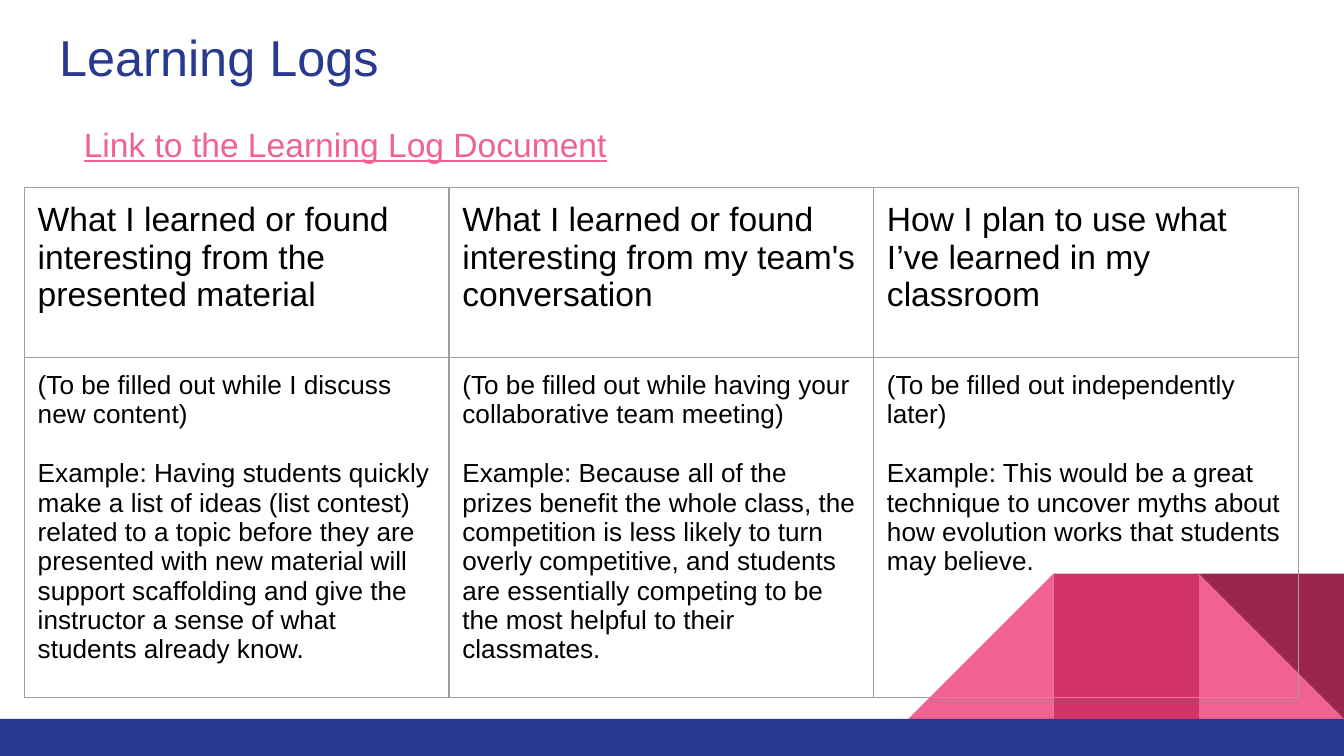
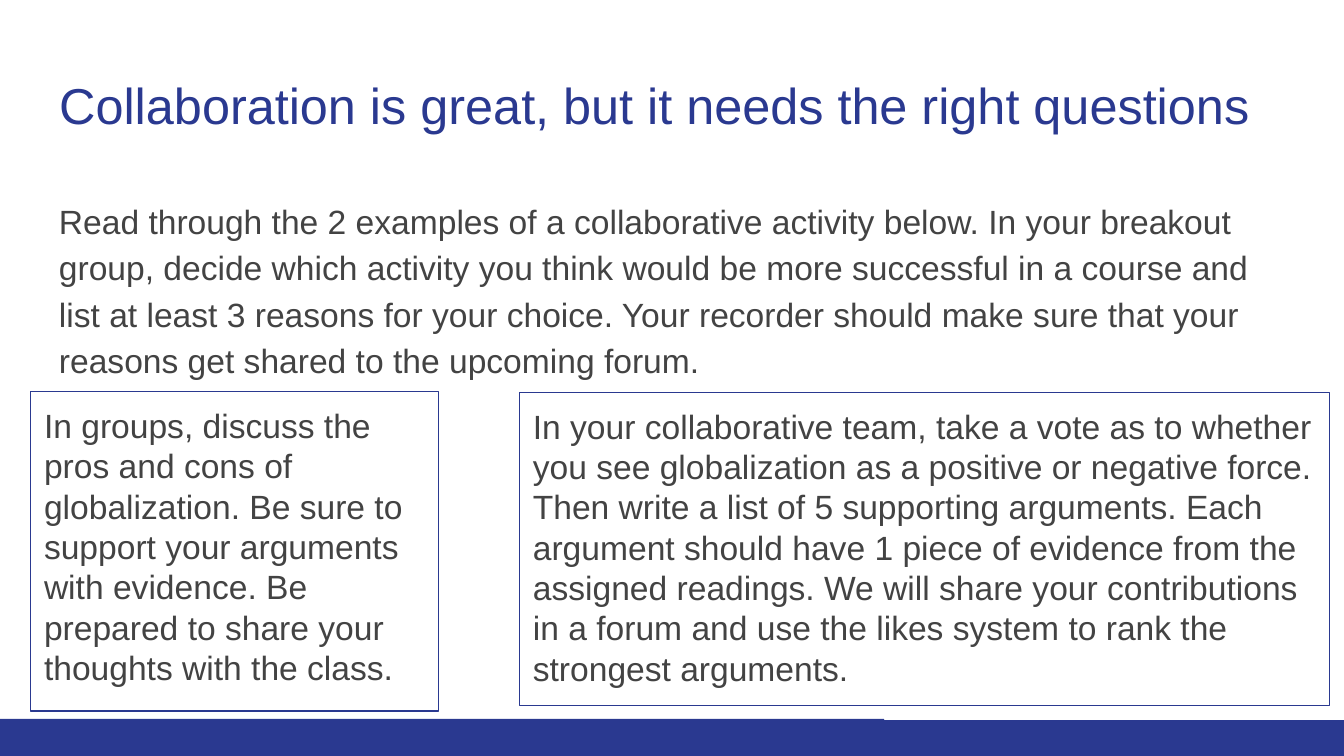
from lxml import etree
from pptx import Presentation
from pptx.dml.color import RGBColor
from pptx.enum import shapes, text
from pptx.oxml import ns
from pptx.util import Pt

NAVY = RGBColor(0x2A, 0x39, 0x90)
PINK = RGBColor(0xF0, 0x62, 0x92)
ROSE = RGBColor(0xD2, 0x33, 0x69)
WINE = RGBColor(0x9C, 0x25, 0x4D)
GREY = RGBColor(0x43, 0x43, 0x43)
BLACK = RGBColor(0, 0, 0)
WHITE = RGBColor(0xFF, 0xFF, 0xFF)
BORDER = "9E9E9E"
INSET = Pt(7.2)
TRIANGLE, RECT = shapes.MSO_SHAPE.RIGHT_TRIANGLE, shapes.MSO_SHAPE.RECTANGLE


def write(frame, *paragraphs, size=18, color=GREY, underline=None, spacing=None,
          after=0, anchor=text.MSO_ANCHOR.TOP):
    frame.word_wrap = True
    frame.auto_size = text.MSO_AUTO_SIZE.NONE
    frame.vertical_anchor = anchor
    frame.margin_left = frame.margin_right = INSET
    frame.margin_top = frame.margin_bottom = INSET
    for i, words in enumerate(paragraphs):
        paragraph = frame.add_paragraph() if i else frame.paragraphs[0]
        paragraph.alignment = text.PP_ALIGN.LEFT
        paragraph.space_before = Pt(0)
        paragraph.space_after = Pt(after if i < len(paragraphs) - 1 else 0)
        if spacing:
            paragraph.line_spacing = spacing
        run = paragraph.add_run()
        run.text = words
        run.font.name, run.font.size = "Arial", Pt(size)
        run.font.color.rgb = color
        run.font.underline = underline


def add_block(slide, preset, left, top, width, height, fill=None, line=None):
    block = slide.shapes.add_shape(preset, Pt(left), Pt(top), Pt(width), Pt(height))
    block.shadow.inherit = False
    if fill is None:
        block.fill.background()
    else:
        block.fill.solid()
        block.fill.fore_color.rgb = fill
    if line is None:
        block.line.fill.background()
    else:
        block.line.color.rgb = line
        block.line.width = Pt(0.75)
    return block


prs = Presentation()
prs.slide_width, prs.slide_height = Pt(720), Pt(405)

# Shared by both slides: title, corner facets, bottom band
FACET, FACET_TOP = 77.8, 307.3
pages = []
for heading, title_top in [
    ("Learning Logs", 6.5),
    ("Collaboration is great, but it needs the right questions", 32.4),
]:
    slide = prs.slides.add_slide(prs.slide_layouts[5])
    pages.append(slide)
    title = slide.shapes.title
    title.left, title.top, title.width, title.height = Pt(24.5), Pt(title_top), Pt(671), Pt(47.5)
    write(title.text_frame, heading, size=27, color=NAVY, anchor=text.MSO_ANCHOR.MIDDLE)

    for preset, columns_from_right, fill, turn in [
        (TRIANGLE, 1, PINK, 0),
        (TRIANGLE, 3, PINK, "flip"),
        (RECT, 2, ROSE, 0),
        (TRIANGLE, 1, WINE, 180),
    ]:
        facet = add_block(slide, preset, 720 - columns_from_right * FACET, FACET_TOP,
                          FACET, FACET, fill)
        if turn == "flip":
            facet._element.spPr.find(ns.qn("a:xfrm")).set("flipH", "1")
        else:
            facet.rotation = turn
    add_block(slide, RECT, 0, FACET_TOP + FACET, 720, 405 - FACET_TOP - FACET, NAVY)

logs, questions = pages

# Learning log table
LOG_COLUMNS = [
    ("What I learned or found interesting from the presented material",
     "(To be filled out while I discuss new content)",
     "Example: Having students quickly make a list of ideas (list contest) related to a "
     "topic before they are presented with new material will support scaffolding and give "
     "the instructor a sense of what students already know."),
    ("What I learned or found interesting from my team's conversation",
     "(To be filled out while having your collaborative team meeting)",
     "Example: Because all of the prizes benefit the whole class, the competition is less "
     "likely to turn overly competitive, and students are essentially competing to be the "
     "most helpful to their classmates."),
    ("How I plan to use what I’ve learned in my classroom",
     "(To be filled out independently later)",
     "Example: This would be a great technique to uncover myths about how evolution works "
     "that students may believe."),
]
ROW_HEIGHTS = (91, 182)
log = logs.shapes.add_table(2, 3, Pt(13), Pt(100.5), Pt(682.5), Pt(sum(ROW_HEIGHTS))).table
log.first_row = log.horz_banding = False
for row, height in zip(log.rows, ROW_HEIGHTS):
    row.height = Pt(height)
for i, (prompt, timing, example) in enumerate(LOG_COLUMNS):
    log.columns[i].width = Pt(227.5)
    write(log.cell(0, i).text_frame, prompt, color=BLACK)
    write(log.cell(1, i).text_frame, timing, example, size=14, color=BLACK, after=15.7)
for cell in log.iter_cells():
    cell.margin_left = cell.margin_right = INSET
    cell.margin_top = cell.margin_bottom = INSET
    properties = cell._tc.get_or_add_tcPr()
    for side in ("lnL", "lnR", "lnT", "lnB"):
        edge = etree.SubElement(properties, ns.qn(f"a:{side}"), w=str(Pt(0.75)))
        solid = etree.SubElement(edge, ns.qn("a:solidFill"))
        etree.SubElement(solid, ns.qn("a:srgbClr"), val=BORDER)
    cell.fill.background()

log_link = logs.shapes.add_textbox(Pt(37.8), Pt(59), Pt(500), Pt(37.5))
write(log_link.text_frame, "Link to the Learning Log Document", color=PINK, underline=True)

# Instructions and the two activities to compare
instructions = questions.shapes.add_textbox(Pt(24.5), Pt(97.2), Pt(671), Pt(113))
write(instructions.text_frame,
      "Read through the 2 examples of a collaborative activity below. In your breakout "
      "group, decide which activity you think would be more successful in a course and list "
      "at least 3 reasons for your choice. Your recorder should make sure that your reasons "
      "get shared to the upcoming forum.", spacing=1.15)

add_block(questions, RECT, 473.8, 285.8, 246.2, 99.5, WHITE, WHITE)
for place, activity in [
    ((16.5, 209.7, 218.3, 171.3),
     "In groups, discuss the pros and cons of globalization. Be sure to support your "
     "arguments with evidence. Be prepared to share your thoughts with the class."),
    ((278.4, 210.2, 434, 167.7),
     "In your collaborative team, take a vote as to whether you see globalization as a "
     "positive or negative force. Then write a list of 5 supporting arguments. Each argument "
     "should have 1 piece of evidence from the assigned readings. We will share your "
     "contributions in a forum and use the likes system to rank the strongest arguments."),
]:
    write(add_block(questions, RECT, *place, line=NAVY).text_frame, activity)

prs.save("out.pptx")
